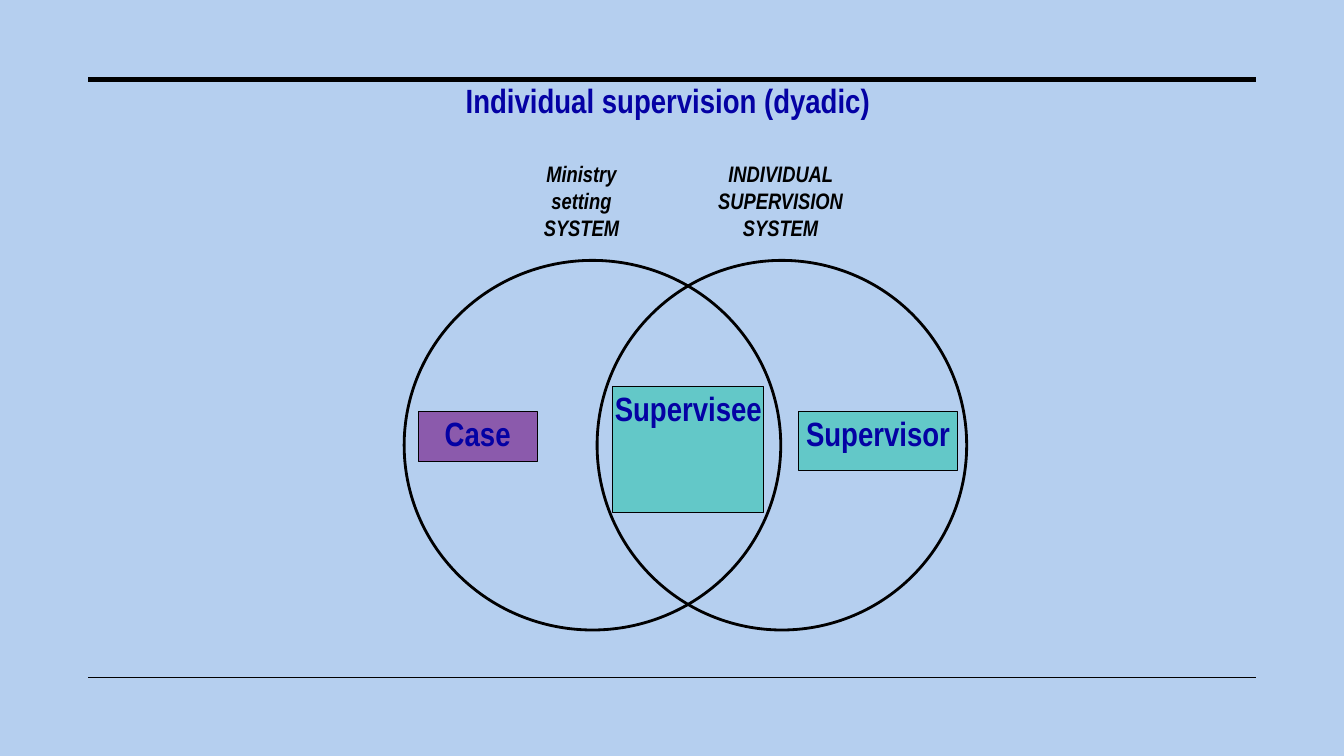
import pptx
import pptx.util
import pptx.dml.color
import pptx.enum.shapes
import pptx.enum.text
import pptx.oxml.ns
import lxml.etree

Pt = pptx.util.Pt
RGB = pptx.dml.color.RGBColor
SHAPE = pptx.enum.shapes.MSO_SHAPE
ANCHOR = pptx.enum.text.MSO_ANCHOR
CENTER = pptx.enum.text.PP_ALIGN.CENTER

SKY = RGB(0xB5, 0xCF, 0xEF)
BLACK = RGB(0, 0, 0)
NAVY = RGB(0x04, 0x01, 0xA4)
PURPLE = RGB(0x8B, 0x5A, 0xAC)
TEAL = RGB(0x63, 0xC8, 0xC8)


def write(shape, text, size=24, color=NAVY, italic=False, inset=0.72,
          anchor=ANCHOR.TOP, spacing=1.0):
    frame = shape.text_frame
    frame.word_wrap = True
    frame.auto_size = pptx.enum.text.MSO_AUTO_SIZE.NONE
    frame.vertical_anchor = anchor
    frame.margin_left = frame.margin_right = Pt(inset)
    frame.margin_top = frame.margin_bottom = Pt(inset)
    frame.text = text
    for para in frame.paragraphs:
        para.alignment = CENTER
        para.line_spacing = spacing
        para.space_before = Pt(0)
        font = para.font
        font.name = "Arial Narrow"
        font.size = Pt(size)
        font.bold = True
        font.italic = italic
        font.color.rgb = color


def place(slide, kind, box, weight, fill=None):
    shape = slide.shapes.add_shape(kind, *map(Pt, box))
    shape.shadow.inherit = False
    if fill is None:
        shape.fill.background()
    else:
        shape.fill.solid()
        shape.fill.fore_color.rgb = fill
    shape.line.color.rgb = BLACK
    shape.line.width = Pt(weight)
    return shape


def frame(slide, box):
    left, top, width, height = box
    for y, weight in ((top, 3.5), (top + height, 1)):
        rule = slide.shapes.add_connector(
            pptx.enum.shapes.MSO_CONNECTOR.STRAIGHT,
            Pt(left), Pt(y), Pt(left + width), Pt(y))
        rule.line.color.rgb = BLACK
        rule.line.width = Pt(weight)
        props = rule.element.find(pptx.oxml.ns.qn("p:spPr"))
        lxml.etree.SubElement(props, pptx.oxml.ns.qn("a:effectLst"))


def heading(slide, box):
    title = slide.shapes.title
    title.left, title.top, title.width, title.height = map(Pt, box)
    write(title, "Individual supervision (dyadic)", inset=3.6,
          anchor=ANCHOR.BOTTOM, spacing=0.9)


def venn(slide, box):
    left, top, width, height = box
    size = height - 72
    systems = (
        (0, size + 5, 83.5, 86.4, "Ministry setting SYSTEM"),
        (width - size, size, 203, 131.8, "INDIVIDUAL SUPERVISION\nSYSTEM"),
    )
    for x, wide, shift, span, text in systems:
        place(slide, SHAPE.OVAL, (left + x, top + 72, wide, size), 2)
        label = slide.shapes.add_textbox(
            Pt(left + shift), Pt(top), Pt(span), Pt(60))
        write(label, text, size=16, color=BLACK, italic=True)
    roles = (
        ("Case", 10, 180, 85, 36, PURPLE),
        ("Supervisee", 149, 162, 108, 90, TEAL),
        ("Supervisor", 281.5, 180, 114, 42, TEAL),
    )
    for text, x, y, wide, high, fill in roles:
        role = place(slide, SHAPE.RECTANGLE,
                     (left + x, top + y, wide, high), 0.75, fill)
        write(role, text)


def main():
    deck = pptx.Presentation()
    deck.slide_width = Pt(960)
    deck.slide_height = Pt(540)
    slide = deck.slides.add_slide(deck.slide_layouts[5])
    slide.background.fill.solid()
    slide.background.fill.fore_color.rgb = SKY
    frame(slide, (63, 57, 834, 427))
    heading(slide, (135, 42, 684, 48))
    venn(slide, (288.7, 114, 401.8, 336))
    deck.save("out.pptx")


if __name__ == "__main__":
    main()
